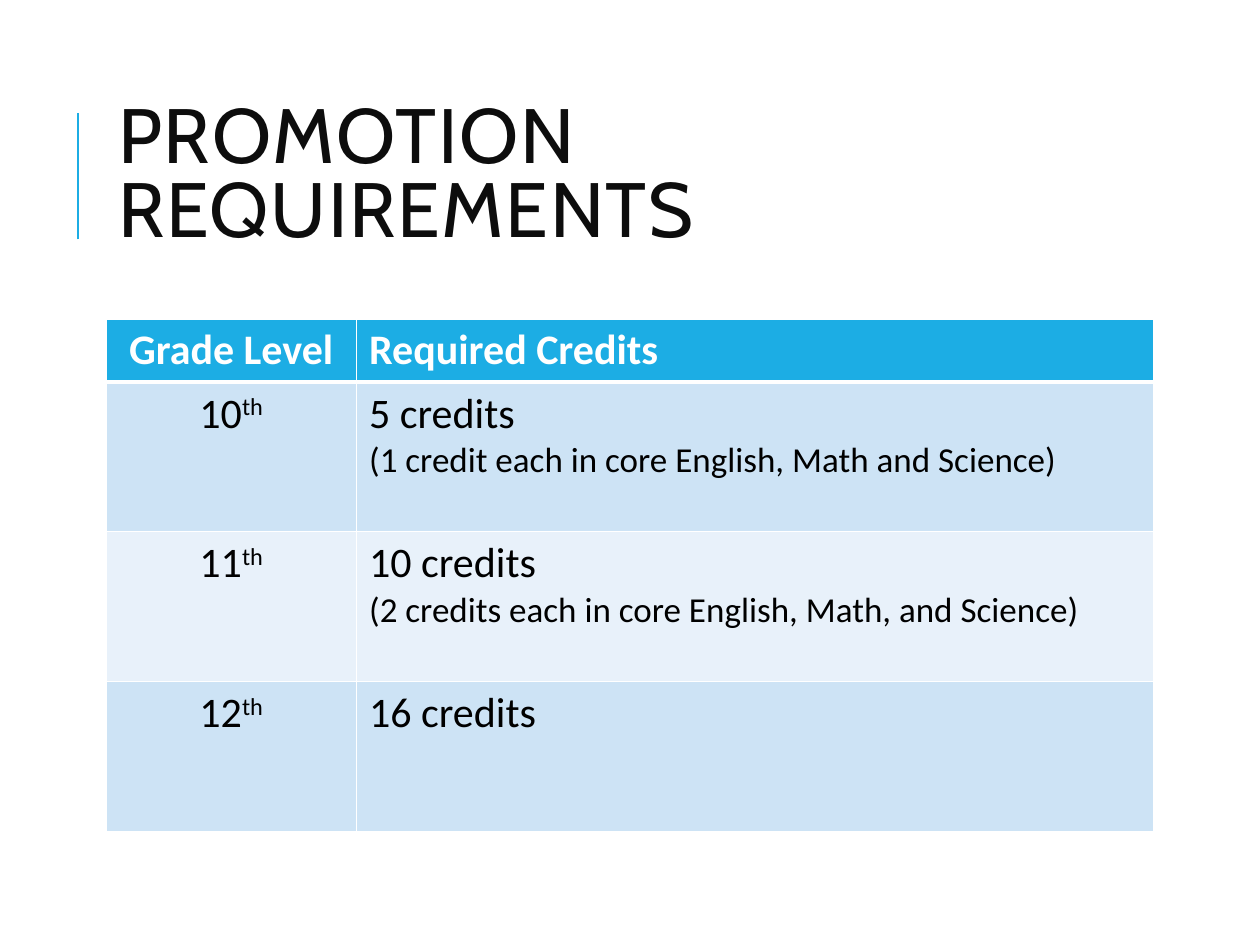
from lxml.etree import SubElement
from pptx import Presentation
from pptx.dml.color import RGBColor
from pptx.enum.shapes import MSO_CONNECTOR
from pptx.enum.text import MSO_ANCHOR, PP_ALIGN
from pptx.oxml.ns import qn
from pptx.util import Inches, Pt

TITLE = "PROMOTION REQUIREMENTS"
HEADER = ("Grade Level", "Required Credits")
GRADES = [
    ("10", ["5 credits", "(1 credit each in core English, Math and Science)"]),
    ("11", ["10 credits", "(2 credits each in core English, Math, and Science)"]),
    ("12", ["16 credits"]),
]
ACCENT, WHITE, BLACK, TITLE_COLOR = "1CADE4", "FFFFFF", "000000", "0D0D0D"
BANDS = ("CDE3F5", "E8F1FA")
LEFT = 0.84
COLUMN_WIDTHS = (1.99, 6.33)
HEADER_HEIGHT, GRADE_HEIGHT = 0.47, 1.19


def rgb(color):
    return RGBColor.from_string(color)


def format_run(run, size, color, font="Calibri", bold=False):
    run.font.name = font
    run.font.size = Pt(size)
    run.font.bold = bold
    run.font.color.rgb = rgb(color)


def format_cell(cell, fill, bottom_width=1):
    cell.fill.solid()
    cell.fill.fore_color.rgb = rgb(fill)
    properties = cell._tc.get_or_add_tcPr()
    widths = {"a:lnL": 1, "a:lnR": 1, "a:lnT": 1, "a:lnB": bottom_width}
    for position, (side, width) in enumerate(widths.items()):
        border = SubElement(properties, qn(side), w=str(Pt(width)))
        SubElement(SubElement(border, qn("a:solidFill")), qn("a:srgbClr"), val=WHITE)
        properties.insert(position, border)


def add_title(slide):
    rule = slide.shapes.add_connector(
        MSO_CONNECTOR.STRAIGHT, Inches(0.62), Inches(1.9), Inches(0.62), Inches(0.9))
    rule.line.color.rgb = rgb(ACCENT)
    rule.line.width = Pt(1.5)
    SubElement(rule._element.spPr, qn("a:effectLst"))

    title = slide.shapes.add_textbox(Inches(LEFT), Inches(0.64), Inches(7.97), Inches(1.55))
    frame = title.text_frame
    frame.word_wrap = True
    frame.vertical_anchor = MSO_ANCHOR.MIDDLE
    frame.text = TITLE
    paragraph = frame.paragraphs[0]
    paragraph.line_spacing = 0.8
    format_run(paragraph.runs[0], 44, TITLE_COLOR, "Cabin")
    paragraph.runs[0].font._element.set("spc", "100")


def add_credit_table(slide):
    row_heights = [HEADER_HEIGHT] + [GRADE_HEIGHT] * len(GRADES)
    table = slide.shapes.add_table(
        len(row_heights), len(COLUMN_WIDTHS), Inches(LEFT), Inches(2.53),
        Inches(sum(COLUMN_WIDTHS)), Inches(sum(row_heights))).table
    for column, width in zip(table.columns, COLUMN_WIDTHS):
        column.width = Inches(width)
    for row, height in zip(table.rows, row_heights):
        row.height = Inches(height)

    for index, heading in enumerate(HEADER):
        cell = table.cell(0, index)
        cell.text_frame.text = heading
        format_run(cell.text_frame.paragraphs[0].runs[0], 24, WHITE, bold=True)
        format_cell(cell, ACCENT, bottom_width=3)

    for index, (grade, credits) in enumerate(GRADES, start=1):
        grade_cell, credit_cell = table.cell(index, 0), table.cell(index, 1)
        grade_cell.text_frame.text = grade
        paragraph = grade_cell.text_frame.paragraphs[0]
        suffix = paragraph.add_run()
        suffix.text = "th"
        for run in paragraph.runs:
            format_run(run, 24, BLACK)
        suffix.font._element.set("baseline", "30000")

        credit_cell.text_frame.text = "\n".join(credits)
        for paragraph, size in zip(credit_cell.text_frame.paragraphs, (24, 20)):
            format_run(paragraph.runs[0], size, BLACK)
        for cell in (grade_cell, credit_cell):
            format_cell(cell, BANDS[(index - 1) % len(BANDS)])

    for row in table.rows:
        row.cells[0].text_frame.paragraphs[0].alignment = PP_ALIGN.CENTER


def main():
    presentation = Presentation()
    presentation.slide_width = Inches(10)
    presentation.slide_height = Inches(7.5)
    slide = presentation.slides.add_slide(presentation.slide_layouts[6])
    add_title(slide)
    add_credit_table(slide)
    presentation.save("out.pptx")


if __name__ == "__main__":
    main()
